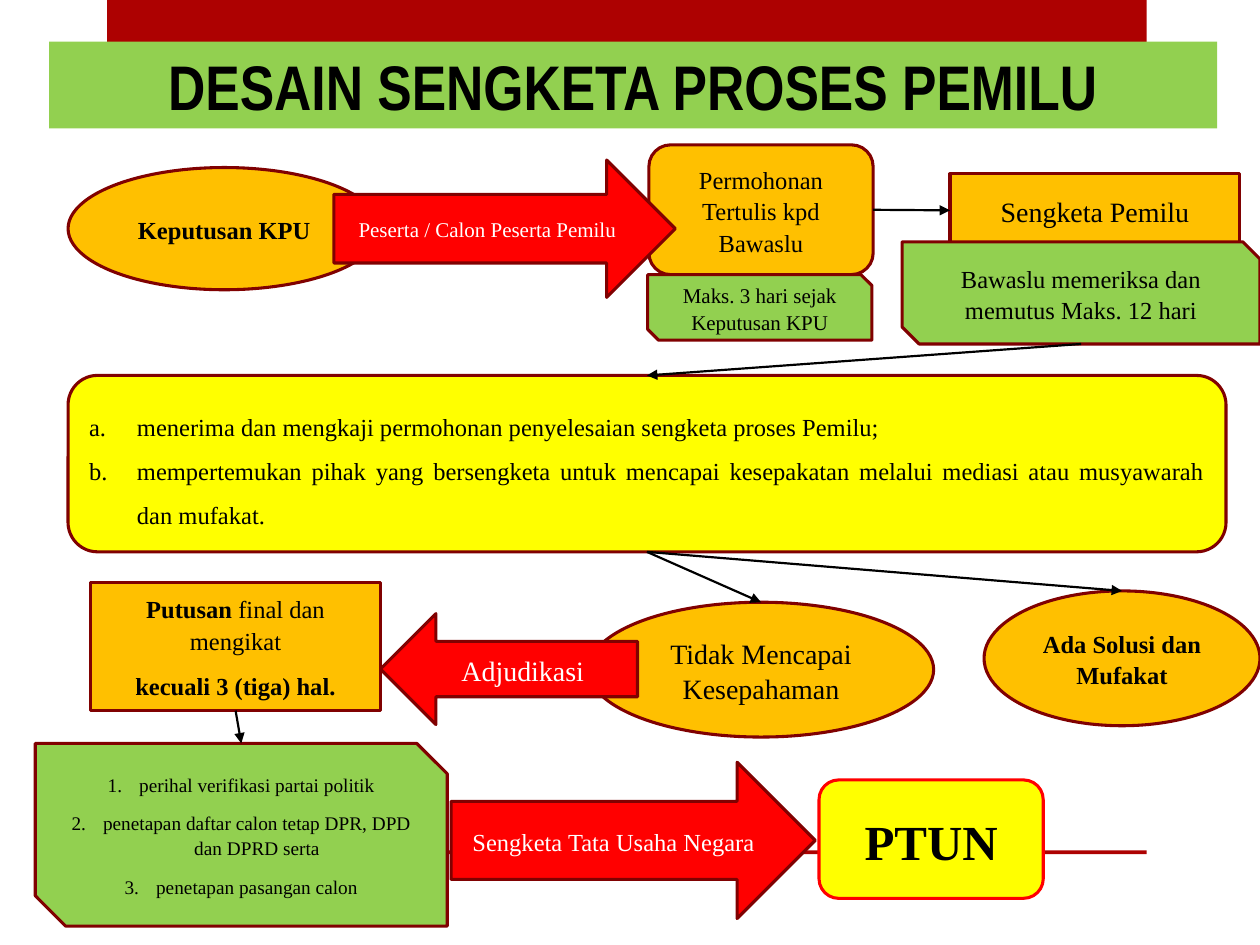
import dataclasses

import pptx
import pptx.dml.color
import pptx.enum.shapes
import pptx.enum.text
import pptx.oxml.ns
import pptx.util
from lxml import etree

SHAPE = pptx.enum.shapes.MSO_SHAPE
ALIGN = pptx.enum.text.PP_ALIGN
ANCHOR = pptx.enum.text.MSO_ANCHOR
TOP, LEFT, BOTTOM, RIGHT = range(4)
COLUMNS, ROWS = 100, 75


@dataclasses.dataclass(frozen=True)
class Theme:
    red: str = "AD0101"
    maroon: str = "800101"
    bright_red: str = "FF0000"
    orange: str = "FFC000"
    green: str = "92D050"
    yellow: str = "FFFF00"
    black: str = "000000"
    white: str = "FFFFFF"
    title_font: str = "Arial Narrow"
    body_font: str = "Times New Roman"
    title: int = 36
    goal: int = 28
    large: int = 16
    normal: int = 14
    small: int = 12
    fine: int = 11
    outline: float = 1.75
    connector: float = 1.25


THEME = Theme()


def rgb(value):
    return pptx.dml.color.RGBColor.from_string(value)


class Grid:
    """Turns columns and rows of the slide into lengths."""

    def __init__(self, presentation):
        self.column = presentation.slide_width / COLUMNS
        self.row = presentation.slide_height / ROWS

    def point(self, column, row):
        return round(column * self.column), round(row * self.row)

    def area(self, column, row, columns, rows):
        return self.point(column, row) + self.point(columns, rows)


def add_block(slide, kind, area, fill, line=None):
    shape = slide.shapes.add_shape(kind, *area)
    shape.shadow.inherit = False
    shape.fill.solid()
    shape.fill.fore_color.rgb = rgb(fill)
    if line:
        shape.line.color.rgb = rgb(line)
        shape.line.width = pptx.util.Pt(THEME.outline)
    else:
        shape.line.fill.background()
    return shape


def format_run(run, size, bold=False, color=THEME.black, font=THEME.body_font):
    run.font.size = pptx.util.Pt(size)
    run.font.bold = bold
    run.font.name = font
    run.font.color.rgb = rgb(color)


def write(shape, text, size, bold=False, color=THEME.black):
    frame = shape.text_frame
    frame.text = text
    frame.word_wrap = True
    frame.vertical_anchor = ANCHOR.MIDDLE
    for paragraph in frame.paragraphs:
        paragraph.alignment = ALIGN.CENTER
        paragraph.line_spacing = 1.07
        paragraph.space_after = pptx.util.Pt(8)
        for run in paragraph.runs:
            format_run(run, size, bold, color)


def number_paragraphs(shape, scheme, indent):
    for paragraph in shape.text_frame.paragraphs:
        properties = paragraph._p.get_or_add_pPr()
        properties.set("marL", str(pptx.util.Inches(indent)))
        properties.set("indent", str(-pptx.util.Inches(indent)))
        number = etree.SubElement(properties, pptx.oxml.ns.qn("a:buAutoNum"))
        number.set("type", scheme)


def add_step(slide, kind, area, fill, text, size, bold=False):
    shape = add_block(slide, kind, area, fill, THEME.maroon)
    write(shape, text, size, bold)
    return shape


def add_action(slide, area, text, size, flip=False):
    """Add a red block arrow with white text."""
    shape = add_block(slide, SHAPE.RIGHT_ARROW, area, THEME.bright_red, THEME.maroon)
    write(shape, text, size, color=THEME.white)
    if flip:
        shape._element.spPr.xfrm.set("flipH", "1")


def side_point(shape, side):
    across = {LEFT: 0, RIGHT: 1}.get(side, 0.5)
    down = {TOP: 0, BOTTOM: 1}.get(side, 0.5)
    return (round(shape.left + across * shape.width),
            round(shape.top + down * shape.height))


def link(slide, source, source_side, target, target_side):
    connector = slide.shapes.add_connector(
        pptx.enum.shapes.MSO_CONNECTOR.STRAIGHT,
        *side_point(source, source_side), *side_point(target, target_side))
    # Snipped shapes number their connection sites differently.
    if source.auto_shape_type != SHAPE.SNIP_2_DIAG_RECTANGLE:
        connector.begin_connect(source, source_side)
    if target.auto_shape_type != SHAPE.SNIP_2_DIAG_RECTANGLE:
        connector.end_connect(target, target_side)
    connector.line.color.rgb = rgb(THEME.black)
    connector.line.width = pptx.util.Pt(THEME.connector)
    line = connector.line._get_or_add_ln()
    etree.SubElement(line, pptx.oxml.ns.qn("a:tailEnd")).set("type", "triangle")
    etree.SubElement(connector._element.spPr, pptx.oxml.ns.qn("a:effectLst"))


def add_header(slide, grid):
    for row, rows in ((0, 4.2), (67.5, 0.3)):
        add_block(slide, SHAPE.RECTANGLE, grid.area(8.5, row, 82.5, rows), THEME.red)
    title = add_block(slide, SHAPE.RECTANGLE, grid.area(3.9, 3.3, 92.7, 6.9), THEME.green)
    frame = title.text_frame
    frame.text = "DESAIN SENGKETA PROSES PEMILU"
    frame.word_wrap = True
    frame.vertical_anchor = ANCHOR.TOP
    frame.paragraphs[0].alignment = ALIGN.CENTER
    format_run(frame.paragraphs[0].runs[0], THEME.title, True, font=THEME.title_font)


def add_request(slide, grid):
    """Add the top row and return its last step."""
    request = add_step(slide, SHAPE.ROUNDED_RECTANGLE, grid.area(51.5, 11.5, 17.8, 10.3),
                       THEME.orange, "Permohonan Tertulis kpd Bawaslu", THEME.normal)
    add_step(slide, SHAPE.OVAL, grid.area(5.4, 13.3, 24.8, 9.7),
             THEME.orange, "Keputusan KPU", THEME.normal, bold=True)
    add_action(slide, grid.area(26.5, 12.7, 27.1, 10.9),
               "Peserta / Calon Peserta Pemilu", THEME.small)
    dispute = add_step(slide, SHAPE.RECTANGLE, grid.area(75.4, 13.8, 23, 5.8),
                       THEME.orange, "Sengketa Pemilu", THEME.large)
    add_step(slide, SHAPE.SNIP_2_DIAG_RECTANGLE, grid.area(51.4, 21.8, 17.8, 5.2),
             THEME.green, "Maks. 3 hari sejak Keputusan KPU", THEME.small)
    review = add_step(slide, SHAPE.SNIP_2_DIAG_RECTANGLE, grid.area(71.6, 19.2, 28.4, 8.1),
                      THEME.green, "Bawaslu memeriksa dan memutus Maks. 12 hari", THEME.normal)
    link(slide, request, RIGHT, dispute, LEFT)
    return review


def add_mediation(slide, grid):
    mediation = add_step(
        slide, SHAPE.ROUNDED_RECTANGLE, grid.area(5.4, 29.8, 91.9, 14), THEME.yellow,
        "menerima dan mengkaji permohonan penyelesaian sengketa proses Pemilu;\n"
        "mempertemukan pihak yang bersengketa untuk mencapai kesepakatan "
        "melalui mediasi atau musyawarah dan mufakat.", THEME.normal)
    for paragraph in mediation.text_frame.paragraphs:
        paragraph.alignment = ALIGN.JUSTIFY
        paragraph.line_spacing = 1.5
        paragraph.space_after = pptx.util.Pt(0)
    number_paragraphs(mediation, "alphaLcPeriod", 0.38)
    return mediation


def add_outcomes(slide, grid, mediation):
    """Add the two outcomes of mediation and return the final ruling."""
    solved = add_step(slide, SHAPE.OVAL, grid.area(78.1, 46.9, 21.9, 10.7),
                      THEME.orange, "Ada Solusi dan Mufakat", THEME.normal, bold=True)
    unsolved = add_step(slide, SHAPE.OVAL, grid.area(46.7, 47.8, 27.4, 10.7),
                        THEME.orange, "Tidak Mencapai Kesepahaman", THEME.large)
    for outcome in (solved, unsolved):
        link(slide, mediation, BOTTOM, outcome, TOP)
    add_action(slide, grid.area(30.2, 48.7, 20.4, 8.8), "Adjudikasi", THEME.large, flip=True)
    ruling = add_step(slide, SHAPE.RECTANGLE, grid.area(7.2, 46.2, 23, 10.2), THEME.orange,
                      "Putusan\nkecuali 3 (tiga) hal.", THEME.normal, bold=True)
    run = ruling.text_frame.paragraphs[0].add_run()
    run.text = " final dan mengikat"
    format_run(run, THEME.normal)
    return ruling


def add_appeal(slide, grid, ruling):
    exceptions = add_step(
        slide, SHAPE.SNIP_2_DIAG_RECTANGLE, grid.area(2.8, 59, 32.7, 14.5), THEME.green,
        "perihal verifikasi partai politik\n"
        "penetapan daftar calon tetap DPR, DPD dan DPRD serta\n"
        "penetapan pasangan calon", THEME.fine)
    number_paragraphs(exceptions, "arabicPeriod", 0.25)
    add_action(slide, grid.area(35.8, 60.5, 28.9, 12.4),
               "Sengketa Tata Usaha Negara", THEME.normal)
    court = add_block(slide, SHAPE.ROUNDED_RECTANGLE, grid.area(65, 61.9, 17.8, 9.4),
                      THEME.yellow, THEME.bright_red)
    write(court, "PTUN", THEME.goal, bold=True)
    link(slide, ruling, BOTTOM, exceptions, TOP)


def main():
    presentation = pptx.Presentation()
    presentation.slide_width = pptx.util.Inches(10)
    presentation.slide_height = pptx.util.Inches(7.5)
    slide = presentation.slides.add_slide(presentation.slide_layouts[6])
    grid = Grid(presentation)
    add_header(slide, grid)
    review = add_request(slide, grid)
    mediation = add_mediation(slide, grid)
    link(slide, review, BOTTOM, mediation, TOP)
    ruling = add_outcomes(slide, grid, mediation)
    add_appeal(slide, grid, ruling)
    presentation.save("out.pptx")


if __name__ == "__main__":
    main()
